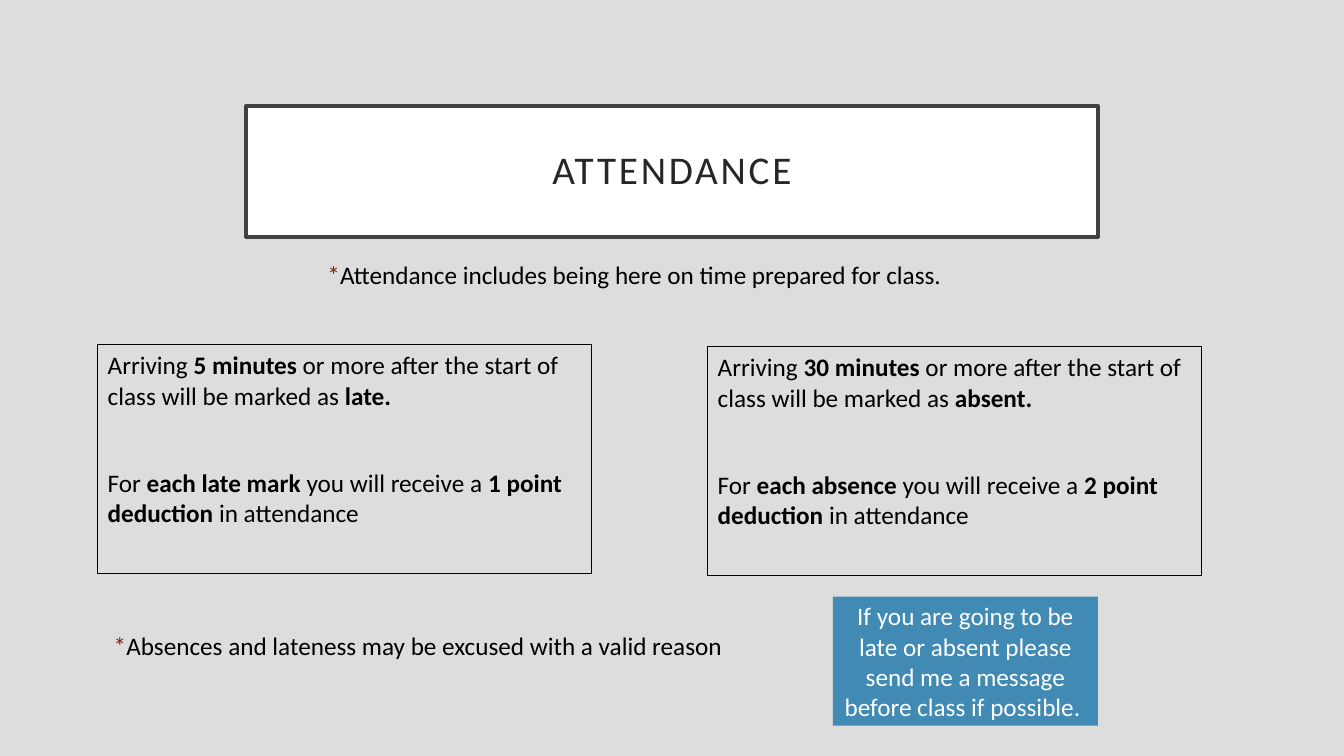
from pptx import Presentation
from pptx.dml.color import RGBColor
from pptx.enum.shapes import MSO_SHAPE as Shape
from pptx.enum.text import MSO_ANCHOR as Anchor, PP_ALIGN as Align
from pptx.util import Inches, Pt

FONT = "Calibri"
BLACK, WHITE = "000000", "FFFFFF"


def rgb(value):
    return RGBColor.from_string(value)


def add_run(paragraph, text, size=18, color=BLACK, bold=False):
    run = paragraph.add_run()
    run.text = text
    run.font.name = FONT
    run.font.size = Pt(size)
    run.font.bold = bold
    run.font.color.rgb = rgb(color)
    return run


def add_box(slide, box, fill=None, line=None, line_width=0.75,
            anchor=Anchor.MIDDLE):
    shape = slide.shapes.add_shape(Shape.RECTANGLE, *map(Inches, box))
    shape.shadow.inherit = False
    if fill:
        shape.fill.solid()
        shape.fill.fore_color.rgb = rgb(fill)
    else:
        shape.fill.background()
    if line:
        shape.line.color.rgb = rgb(line)
        shape.line.width = Pt(line_width)
    else:
        shape.line.fill.background()
    frame = shape.text_frame
    frame.word_wrap = True
    frame.vertical_anchor = anchor
    return frame


# Framed heading with spaced letters
def add_title(slide, box, text):
    frame = add_box(slide, box, WHITE, "404040", 2.5)
    frame.margin_left = frame.margin_right = Inches(0.2)
    frame.margin_top = frame.margin_bottom = Inches(0.2)
    heading = frame.paragraphs[0]
    heading.alignment = Align.CENTER
    heading.line_spacing = 0.9
    run = add_run(heading, text, 28, "262626")
    run.font._element.set("spc", "200")


# Outlined card: what counts, then what it costs
def add_rule_card(slide, box, minutes, status, mark, points):
    frame = add_box(slide, box, line=BLACK, anchor=Anchor.TOP)
    definition = frame.paragraphs[0]
    penalty = frame.add_paragraph()
    definition.space_before = Pt(10)
    penalty.space_before = Pt(41)
    for paragraph, parts in (
        (definition, ("Arriving ", f"{minutes} minutes ",
                      "or more after the start of class will be marked as ",
                      f"{status}.")),
        (penalty, ("For ", f"each {mark} ", "you will receive a ",
                   f"{points} point deduction ", "in attendance")),
    ):
        for i, part in enumerate(parts):
            add_run(paragraph, part, bold=i % 2 == 1)
        paragraph.alignment = Align.LEFT


# Note led by a coloured asterisk
def add_note(slide, box, text):
    frame = slide.shapes.add_textbox(*map(Inches, box)).text_frame
    frame.word_wrap = True
    note = frame.paragraphs[0]
    add_run(note, "*", color="722811")
    add_run(note, text)


# Filled box with a request to students
def add_request(slide, box, text):
    request = add_box(slide, box, "418AB3").paragraphs[0]
    request.alignment = Align.CENTER
    add_run(request, text, color=WHITE)


def main():
    deck = Presentation()
    deck.slide_width, deck.slide_height = Inches(13.33), Inches(7.5)
    slide = deck.slides.add_slide(deck.slide_layouts[6])
    slide.background.fill.solid()
    slide.background.fill.fore_color.rgb = rgb("DDDDDD")

    add_title(slide, (2.44, 1.05, 8.45, 1.3), "ATTENDANCE")
    add_note(slide, (3.15, 2.52, 7.24, 0.71),
             "Attendance includes being here on time prepared for class.")
    add_rule_card(slide, (0.97, 3.42, 4.9, 2.27), 5, "late", "late mark", 1)
    add_rule_card(slide, (7.02, 3.44, 4.9, 2.27), 30, "absent", "absence", 2)
    add_note(slide, (1.03, 6.2, 6.77, 0.71),
             "Absences and lateness may be excused with a valid reason")
    add_request(slide, (8.26, 5.92, 2.63, 1.28),
                "If you are going to be late or absent please send me "
                "a message before class if possible. ")
    deck.save("out.pptx")


if __name__ == "__main__":
    main()
